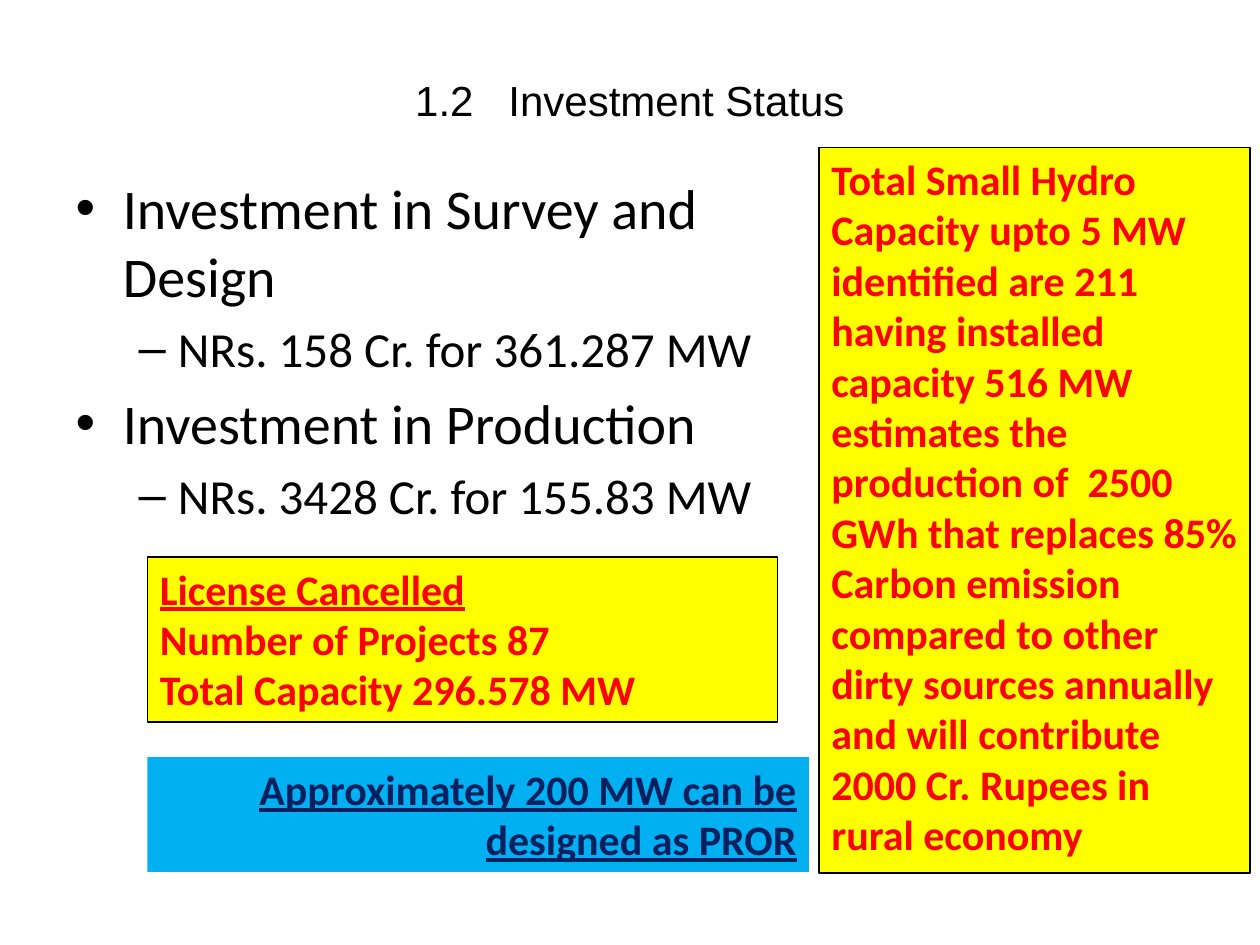
import pptx
import pptx.util
import pptx.dml.color
import pptx.enum.text
import pptx.enum.shapes

Inch = pptx.util.Inches
Align = pptx.enum.text.PP_ALIGN
Anchor = pptx.enum.text.MSO_ANCHOR
Fit = pptx.enum.text.MSO_AUTO_SIZE


def tint(code):
    return pptx.dml.color.RGBColor.from_string(code)


def write(frame, text, size=24, font="Calibri", color="000000", bold=False,
          line=False, align=None, level=0, first=False):
    """Put one formatted paragraph into a text frame."""
    para = frame.paragraphs[0] if first else frame.add_paragraph()
    para.level = level
    para.alignment = align
    run = para.add_run()
    run.text = text
    run.font.size = pptx.util.Pt(size)
    run.font.name = font
    run.font.bold = bold
    run.font.underline = line
    run.font.color.rgb = tint(color)


deck = pptx.Presentation()
deck.slide_width, deck.slide_height = Inch(10), Inch(7.5)
slide = deck.slides.add_slide(deck.slide_layouts[1])
title, body = slide.placeholders

# Title, raised a little above the middle of its box
title.left, title.top = Inch(0.5), Inch(0.3)
title.width, title.height = Inch(9), Inch(1.25)
frame = title.text_frame
frame.auto_size = Fit.NONE
frame.vertical_anchor = Anchor.MIDDLE
frame.margin_bottom = Inch(0.32)
write(frame, "1.2   Investment Status", font="Arial", align=Align.CENTER, first=True)

# Investment list
body.left, body.top = Inch(0.5), Inch(1.33)
body.width, body.height = Inch(5.75), Inch(5.37)
body.text_frame.auto_size = Fit.NONE
items = [
    (0, "Investment in Survey and Design"),
    (1, "NRs. 158 Cr. for 361.287 MW"),
    (0, "Investment in Production"),
    (1, "NRs. 3428 Cr. for 155.83 MW"),
]
for row, (level, text) in enumerate(items):
    write(body.text_frame, text, size=32 - 4 * level, level=level, first=row == 0)

# Coloured notes: place, fill, border, text colour, alignment, (text, underlined)
notes = [
    ((6.5, 1.17, 3.42, 5.76), "FFFF00", "000000", "FF0000", Align.LEFT,
     [("Total Small Hydro Capacity upto 5 MW identified are 211  having installed "
       "capacity 516 MW estimates the production of  2500 GWh that replaces 85% "
       "Carbon emission compared to other dirty sources annually and will "
       "contribute 2000 Cr. Rupees in rural economy", False)]),
    ((1.17, 6.01, 5.25, 0.91), "00B0F0", None, "002060", Align.RIGHT,
     [("Approximately 200 MW can be designed as PROR", True)]),
    ((1.17, 4.42, 5, 1.31), "FFFF00", "000000", "FF0000", Align.LEFT,
     [("License Cancelled", True),
      ("Number of Projects 87", False),
      ("Total Capacity 296.578 MW", False)]),
]
for place, fill, edge, color, align, lines in notes:
    note = slide.shapes.add_shape(
        pptx.enum.shapes.MSO_SHAPE.RECTANGLE, *map(Inch, place))
    note.shadow.inherit = False
    note.fill.solid()
    note.fill.fore_color.rgb = tint(fill)
    if edge:
        note.line.color.rgb = tint(edge)
        note.line.width = pptx.util.Pt(0.75)
    else:
        note.line.fill.background()
    frame = note.text_frame
    frame.word_wrap = True
    frame.auto_size = Fit.SHAPE_TO_FIT_TEXT
    frame.vertical_anchor = Anchor.TOP
    for row, (text, line) in enumerate(lines):
        write(frame, text, color=color, bold=True, line=line, align=align,
              first=row == 0)

deck.save("out.pptx")
